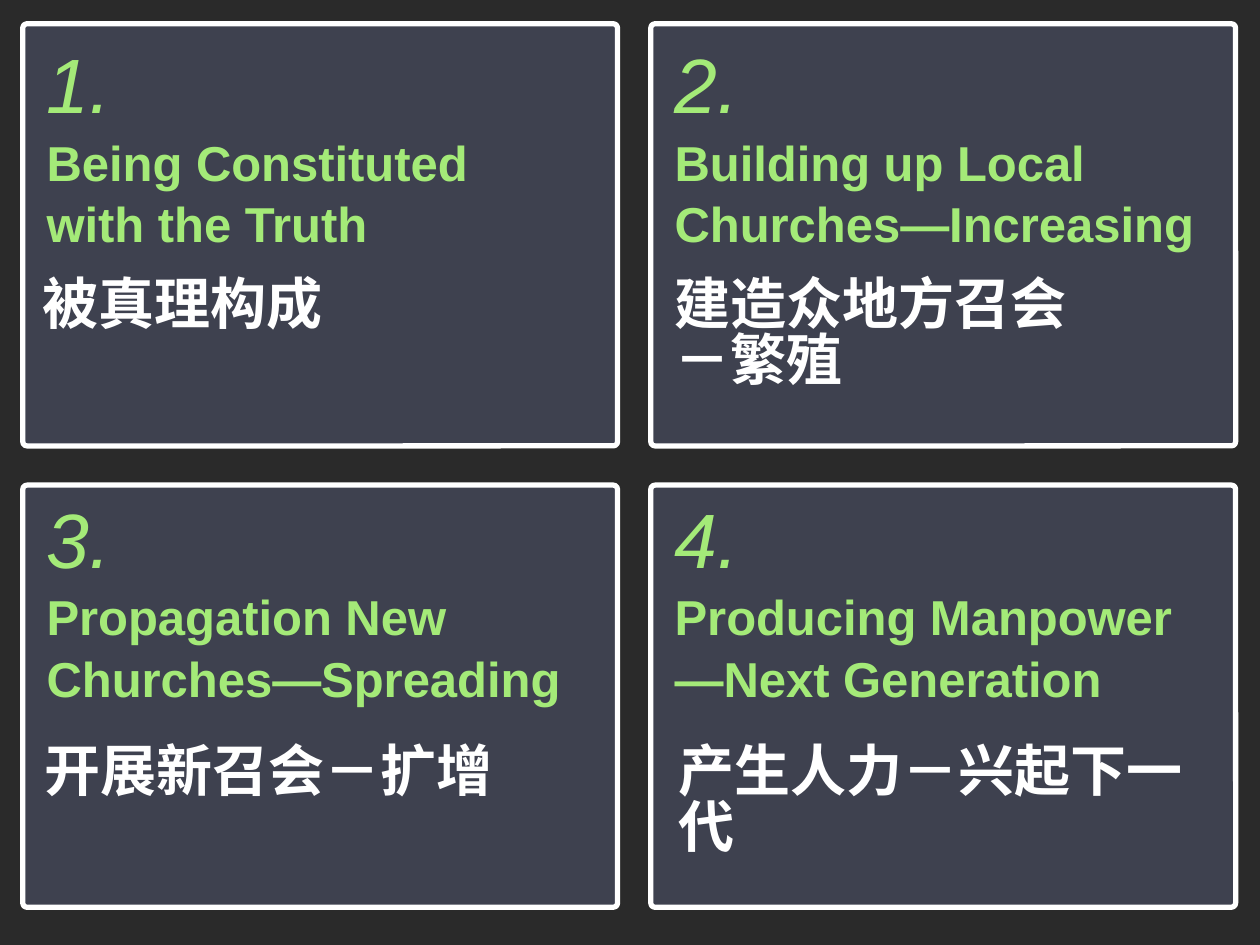
from pptx import Presentation
from pptx.dml.color import RGBColor
from pptx.enum.shapes import MSO_SHAPE as Shape
from pptx.enum.text import MSO_ANCHOR as Anchor
from pptx.oxml.ns import qn
from pptx.util import Cm, Pt
from lxml.etree import SubElement

BACKGROUND, PANEL, GREEN, WHITE = "2A2A2A", "3E414F", "A4EA78", "FFFFFF"
LATIN, CHINESE = "Arial", "Noto Sans CJK SC"

# Column: left, width. Row: top, heading offset, translation offset (cm)
COLUMNS = [(0.46, 11.99), (13.12, 11.79)]
ROWS = [(0.48, 0.64, 5.04), (9.78, 0.51, 5.16)]
PANEL_HEIGHT = 8.51

# Title, translation paragraphs, translation box: offset, width, height (cm)
TOPICS = [
    ("Being Constituted \nwith the Truth", ["被真理构成"], (0.15, 6.43, 1.63)),
    ("Building up Local Churches—Increasing", ["建造众地方召会", "－繁殖"],
     (0.23, 11.53, 3.0)),
    ("Propagation New Churches—Spreading", ["开展新召会－扩增"],
     (0.18, 10.29, 1.63)),
    ("Producing Manpower\n—Next Generation", ["产生人力－兴起下一代"],
     (0.3, 10.72, 3.0)),
]


def color(value):
    return RGBColor.from_string(value)


def add_text(paragraph, text, size, fill, name, bold=False, italic=False):
    for index, line in enumerate(text.split("\n")):
        if index:
            paragraph.add_line_break()
        run = paragraph.add_run()
        run.text = line
        font = run.font
        font.size, font.name = Pt(size), name
        font.bold, font.italic = bold, italic
        font.color.rgb = color(fill)
        SubElement(font._element, qn("a:ea")).set("typeface", name)


def add_frame(group, left, top, width, height):
    box = group.shapes.add_textbox(Cm(left), Cm(top), Cm(width), Cm(height))
    box.text_frame.word_wrap = True
    return box.text_frame


def add_panel(group, left, top, width, height):
    panel = group.shapes.add_shape(
        Shape.ROUNDED_RECTANGLE, Cm(left), Cm(top), Cm(width), Cm(height))
    panel.adjustments[0] = 0.01
    panel.shadow.inherit = False
    panel.fill.solid()
    panel.fill.fore_color.rgb = color(PANEL)
    panel.line.color.rgb = color(WHITE)
    panel.line.width = Pt(3)


def add_heading(group, left, top, width, number, title):
    frame = add_frame(group, left, top, width, 3.5)
    frame.vertical_anchor = Anchor.MIDDLE
    frame.margin_left = frame.margin_right = Cm(0.1)
    frame.margin_top = frame.margin_bottom = Cm(0.1)
    first, second = frame.paragraphs[0], frame.add_paragraph()
    first.line_spacing = second.line_spacing = 1.05
    add_text(first, f"{number}.", 44, GREEN, LATIN, italic=True)
    add_text(second, title, 28, GREEN, LATIN, bold=True)


def add_translation(group, left, top, width, height, lines):
    frame = add_frame(group, left, top, width, height)
    for index, line in enumerate(lines):
        paragraph = frame.add_paragraph() if index else frame.paragraphs[0]
        paragraph.line_spacing = 0.83
        add_text(paragraph, line, 32, WHITE, CHINESE, bold=True)


def add_topic(slide, column, row, number, topic):
    left, width = column
    top, heading_offset, translation_offset = row
    title, lines, (indent, text_width, text_height) = topic
    group = slide.shapes.add_group_shape()
    add_panel(group, left, top, width, PANEL_HEIGHT)
    add_heading(group, left + 0.38, top + heading_offset, 11.63, number, title)
    add_translation(group, left + indent, top + translation_offset,
                    text_width, text_height, lines)


def main():
    presentation = Presentation()
    presentation.slide_width, presentation.slide_height = Cm(25.4), Cm(19.05)
    slide = presentation.slides.add_slide(presentation.slide_layouts[6])
    slide.background.fill.solid()
    slide.background.fill.fore_color.rgb = color(BACKGROUND)

    # Two by two grid of topics
    for index, topic in enumerate(TOPICS):
        row, column = divmod(index, 2)
        add_topic(slide, COLUMNS[column], ROWS[row], index + 1, topic)

    presentation.save("out.pptx")


if __name__ == "__main__":
    main()
